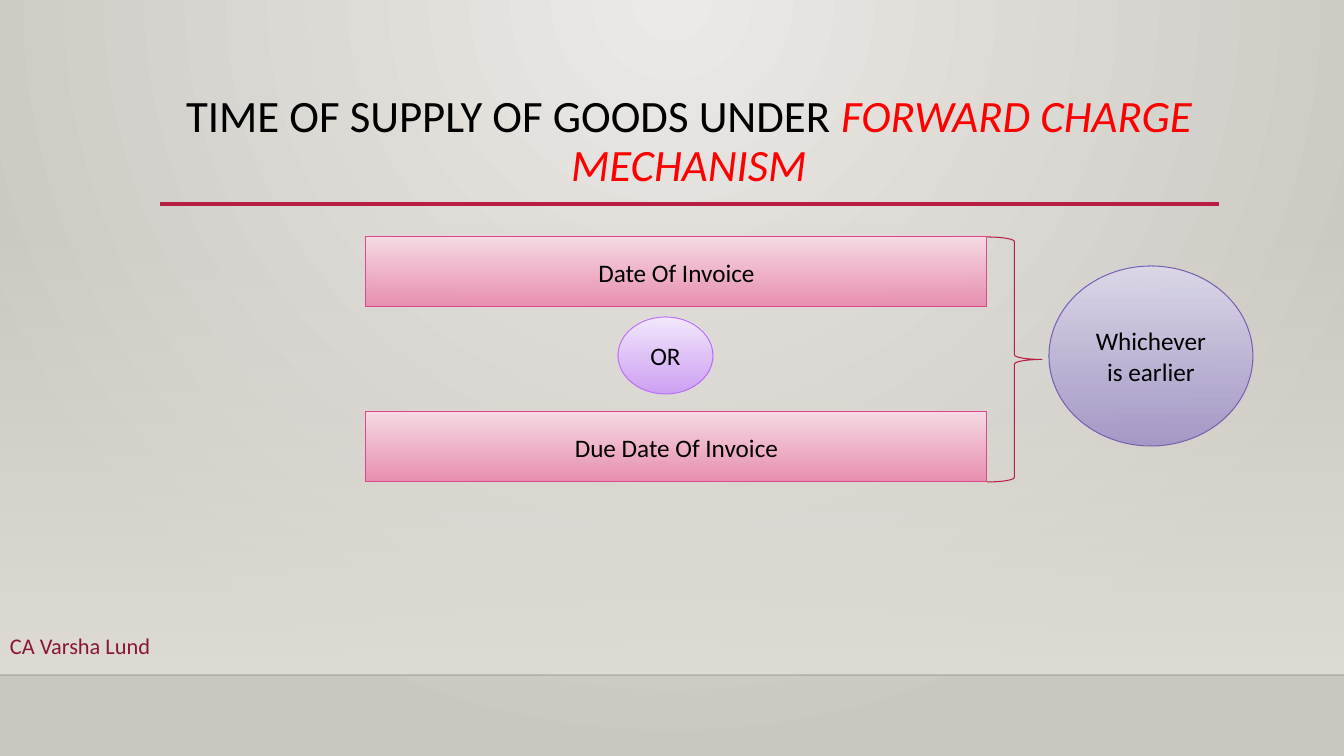
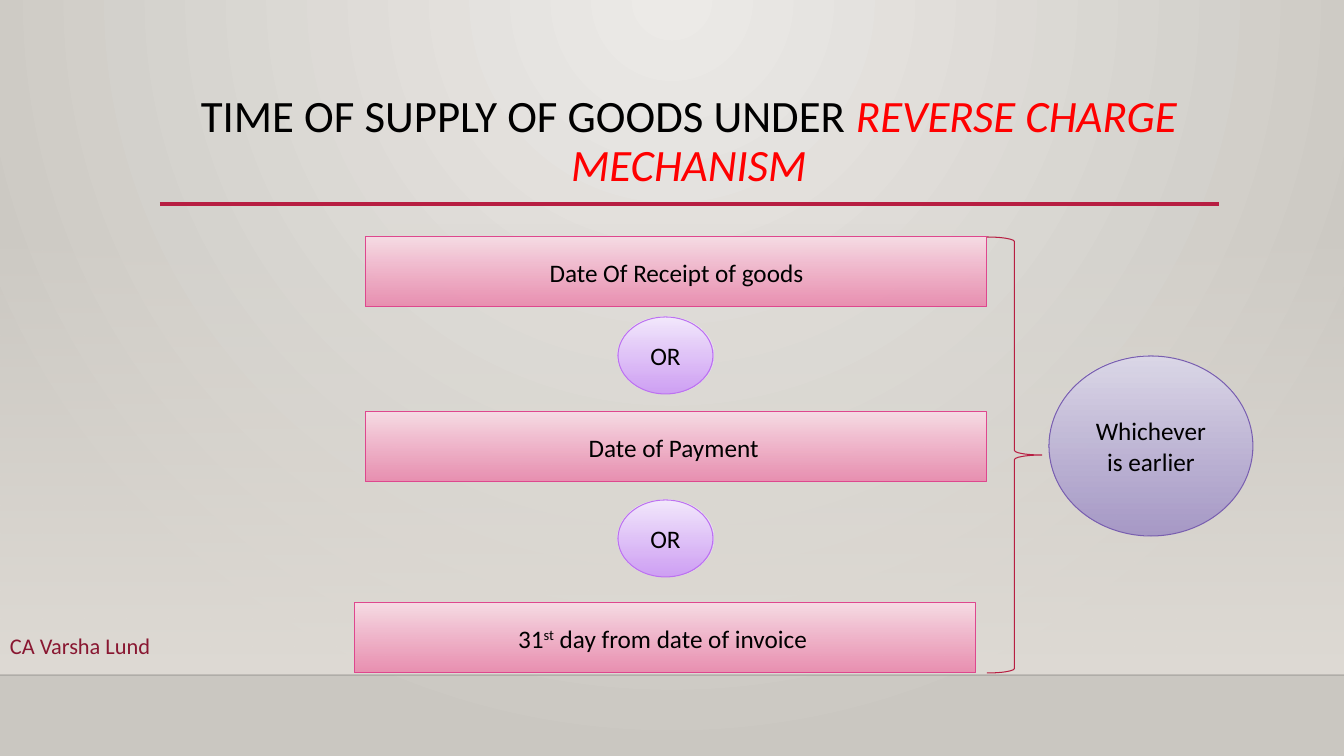
import pptx
import pptx.util
import pptx.dml.color
import pptx.enum.shapes
import pptx.enum.text
import pptx.oxml
import pptx.oxml.ns
from lxml import etree

RGB = pptx.dml.color.RGBColor
SHAPE = pptx.enum.shapes.MSO_SHAPE
ALIGN = pptx.enum.text.PP_ALIGN
ANCHOR = pptx.enum.text.MSO_ANCHOR
qn = pptx.oxml.ns.qn

BLACK = RGB(0x00, 0x00, 0x00)
HAIRLINE = RGB(0x00, 0x00, 0x01)
RED = RGB(0xFF, 0x00, 0x00)
CRIMSON = RGB(0xB7, 0x1E, 0x42)
MAROON = RGB(0x89, 0x17, 0x31)
PINK_LINE = RGB(0xDE, 0x47, 0x8E)
VIOLET_LINE = RGB(0xBC, 0x72, 0xF0)
PURPLE_LINE = RGB(0x79, 0x5F, 0xAF)

# Gradients: (colour, opacity in percent) from start to end
BACKDROP = ((RGB(0xEC, 0xEA, 0xE7), 100), (RGB(0xCA, 0xC7, 0xC1), 100))
BAND = ((RGB(0xDF, 0xDB, 0xD5), 0), (RGB(0xDF, 0xDB, 0xD5), 100))
PINK = ((RGB(0xF7, 0xDC, 0xE5), 100), (RGB(0xEA, 0x8A, 0xAE), 92))
VIOLET = ((RGB(0xF4, 0xEA, 0xFD), 100), (RGB(0xCE, 0x9C, 0xF7), 92))
PURPLE = ((RGB(0xDC, 0xD8, 0xE8), 100), (RGB(0xA3, 0x95, 0xC6), 92))

FONT = "Calibri"
WIDTH, HEIGHT = 1344, 756
FLOOR = 675
BAR_LEFT, BAR_WIDTH, BAR_HEIGHT = 366, 621, 70
BRACE_LEFT, BRACE_WIDTH = BAR_LEFT + BAR_WIDTH, 55

DECK = (
    {
        "mechanism": "FORWARD CHARGE MECHANISM",
        "bars": ((BAR_LEFT, 237, ("Date Of Invoice",)),
                 (BAR_LEFT, 412, ("Due Date Of Invoice",))),
        "or_tops": (317,),
        "outcome_top": 266,
    },
    {
        "mechanism": "REVERSE CHARGE MECHANISM",
        "bars": ((BAR_LEFT, 237, ("Date Of Receipt of goods",)),
                 (BAR_LEFT, 412, ("Date of Payment ",)),
                 (355, 603, ("31", "st", " day from date of invoice "))),
        "or_tops": (317, 500),
        "outcome_top": 356,
    },
)


def px(length):
    return pptx.util.Emu(round(length * 914400 / 100.8))


def box(*lengths):
    return [px(length) for length in lengths]


def add_run(paragraph, text, size, color, **formats):
    run = paragraph.add_run()
    run.text = text
    values = {"name": FONT, "size": pptx.util.Pt(size), **formats}
    for key, value in values.items():
        setattr(run.font, key, value)
    run.font.color.rgb = color
    return run


def set_opacity(color_element, percent):
    etree.SubElement(color_element, qn("a:alpha")).set("val", str(percent * 1000))


def paint_gradient(fill, owner, stops):
    """Fill top to bottom; owner is the XML element that holds the fill."""
    fill.gradient()
    fill.gradient_angle = 270
    gradient = owner.find(".//" + qn("a:gradFill"))
    for stop, position, (color, opacity) in zip(fill.gradient_stops, (0, 1), stops):
        stop.position = position
        stop.color.rgb = color
    for color_element, (_, opacity) in zip(gradient.iter(qn("a:srgbClr")), stops):
        if opacity < 100:
            set_opacity(color_element, opacity)
    return gradient


def add_figure(slide, preset, place, line_color=None, stops=None):
    figure = slide.shapes.add_shape(preset, *box(*place))
    figure.shadow.inherit = False
    if stops:
        paint_gradient(figure.fill, figure.element, stops)
    else:
        figure.fill.background()
    if line_color is None:
        figure.line.fill.background()
    else:
        figure.line.color.rgb = line_color
        figure.line.width = pptx.util.Pt(0.75)
    return figure


def add_label(figure, parts):
    """Centre the parts in the figure; every second part is superscript."""
    frame = figure.text_frame
    frame.word_wrap = True
    frame.vertical_anchor = ANCHOR.MIDDLE
    paragraph = frame.paragraphs[0]
    paragraph.alignment = ALIGN.CENTER
    for index, part in enumerate(parts):
        run = add_run(paragraph, part, 18, BLACK)
        if index % 2:
            run._r.get_or_add_rPr().set("baseline", "30000")


def add_rule(slide, left, right, y, color, width):
    rule = slide.shapes.add_connector(
        pptx.enum.shapes.MSO_CONNECTOR.STRAIGHT, *box(left, y, right, y))
    rule.line.color.rgb = color
    rule.line.width = pptx.util.Pt(width)
    etree.SubElement(rule.element.spPr, qn("a:effectLst"))
    return rule


def prepare_layout(layout):
    """Set the radial backdrop and the title place, and drop unused placeholders."""
    gradient = paint_gradient(layout.background.fill, layout.element, BACKDROP)
    gradient.remove(gradient.find(qn("a:lin")))
    glow = etree.SubElement(gradient, qn("a:path"))
    glow.set("path", "circle")
    focus = etree.SubElement(glow, qn("a:fillToRect"))
    for side, percent in {"l": 43, "t": 0, "r": 43, "b": 100}.items():
        focus.set(side, str(percent * 1000))
    for placeholder in list(layout.placeholders):
        if placeholder.placeholder_format.idx:
            placeholder.element.getparent().remove(placeholder.element)
        else:
            place = zip(("left", "top", "width", "height"), box(160, 89, 1058, 116))
            for side, length in place:
                setattr(placeholder, side, length)


def add_layout_decor(layout, slide):
    """Draw band and rules on the slide, then move them to the layout."""
    band = add_figure(slide, SHAPE.RECTANGLE, (0, 223, WIDTH, FLOOR - 223), stops=BAND)
    floor_rule = add_rule(slide, 0, WIDTH, FLOOR, HAIRLINE, 1)
    set_opacity(floor_rule.element.find(".//" + qn("a:srgbClr")), 20)
    title_rule = add_rule(slide, 160, 1219, 204, CRIMSON, 2.5)
    for index, part in enumerate((band, floor_rule, title_rule), start=2):
        layout.shapes.element.insert(index, part.element)


def set_title(slide, mechanism):
    frame = slide.shapes.title.text_frame
    frame.word_wrap = True
    frame.vertical_anchor = ANCHOR.TOP
    paragraph = frame.paragraphs[0]
    paragraph.alignment = ALIGN.CENTER
    paragraph.line_spacing = 0.9
    add_run(paragraph, "TIME OF SUPPLY OF GOODS UNDER ", 32, BLACK)
    add_run(paragraph, mechanism, 32, RED, italic=True)


def add_author(slide):
    author = slide.shapes.add_textbox(*box(0, 627, 361, 37))
    frame = author.text_frame
    frame.word_wrap = True
    frame.auto_size = pptx.enum.text.MSO_AUTO_SIZE.SHAPE_TO_FIT_TEXT
    add_run(frame.paragraphs[0], "CA Varsha Lund", 16, MAROON)


def add_choice(slide, bars, or_tops, outcome_top):
    """Alternatives joined by OR, braced towards their outcome."""
    for left, top, parts in bars:
        bar = add_figure(slide, SHAPE.RECTANGLE, (left, top, BAR_WIDTH, BAR_HEIGHT),
                         PINK_LINE, PINK)
        add_label(bar, parts)
    for top in or_tops:
        joint = add_figure(slide, SHAPE.OVAL, (618, top, 95, 77), VIOLET_LINE, VIOLET)
        add_label(joint, ("OR",))
    first_top, last_top = bars[0][1], bars[-1][1]
    add_figure(slide, SHAPE.RIGHT_BRACE,
               (BRACE_LEFT, first_top, BRACE_WIDTH, last_top + BAR_HEIGHT - first_top),
               CRIMSON)
    outcome = add_figure(slide, SHAPE.OVAL, (1049, outcome_top, 204, 180),
                         PURPLE_LINE, PURPLE)
    add_label(outcome, ("Whichever is earlier",))


def main():
    deck = pptx.Presentation()
    deck.slide_width, deck.slide_height = box(WIDTH, HEIGHT)
    layout = deck.slide_layouts[5]
    prepare_layout(layout)
    slides = [deck.slides.add_slide(layout) for _ in DECK]
    add_layout_decor(layout, slides[0])
    for slide, content in zip(slides, DECK):
        set_title(slide, content["mechanism"])
        add_choice(slide, content["bars"], content["or_tops"], content["outcome_top"])
        add_author(slide)
    deck.save("out.pptx")


if __name__ == "__main__":
    main()
